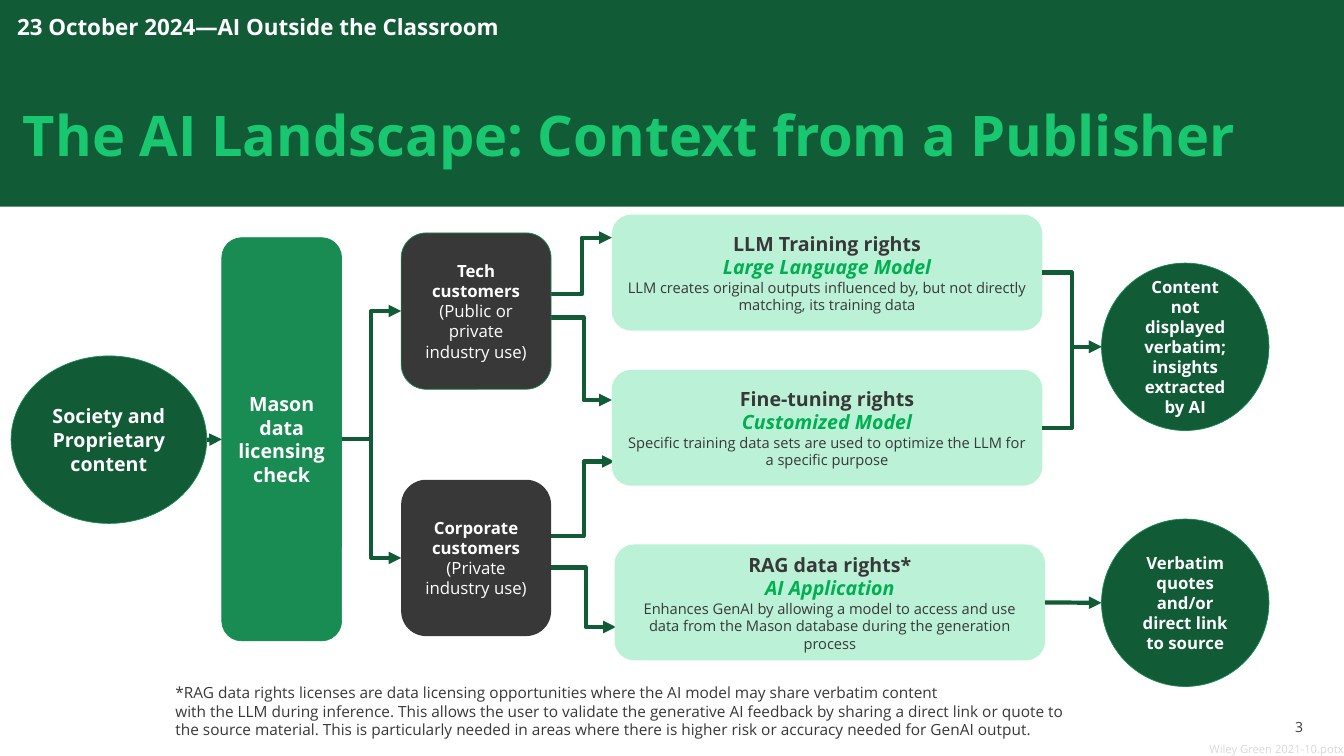
from lxml.etree import SubElement
from pptx import Presentation
from pptx.dml.color import RGBColor
from pptx.enum.shapes import MSO_CONNECTOR as LINK, MSO_SHAPE as SHAPE
from pptx.enum.text import MSO_ANCHOR as ANCHOR, PP_ALIGN as ALIGN
from pptx.oxml.ns import qn
from pptx.util import Cm, Pt

COLORS = {
    "dark": "115C36", "mid": "198C53", "bright": "18C76F", "pale": "BBF2D7",
    "accent": "00B050", "ink": "383838", "faint": "D8D9DA", "white": "FFFFFF",
}
FONT = "Open Sans"
WIDTH, HEIGHT = 33.87, 19.05
BAND_HEIGHT = 5.21
DIAMETER = 4.22
CUSTOMER_SIZE = (3.78, 3.94)
RIGHTS_SIZE = (10.85, 2.92)
TOP, LEFT, BOTTOM, RIGHT = range(4)

TITLE = "The AI Landscape: Context from a Publisher"
DATE = "23 October 2024—AI Outside the Classroom"
NOTE = [
    "*RAG data rights licenses are data licensing opportunities where the AI model may share verbatim content",
    "with the LLM during inference. This allows the user to validate the generative AI feedback by sharing a direct link or quote to",
    "the source material. This is particularly needed in areas where there is higher risk or accuracy needed for GenAI output.",
]
CIRCLES = [
    ("Society and Proprietary content", 0.28, 8.97, 4.93, 14),
    ("Content not displayed verbatim; insights extracted by AI", 27.76, 6.63, DIAMETER, 12),
    ("Verbatim quotes and/or direct link to source", 27.76, 13.08, DIAMETER, 12),
]
LICENSING = ("Mason data licensing check", 5.59, 5.99, 3.02, 10.16)
CUSTOMERS = [
    ("Tech customers", "(Public or private industry use)", 10.11, 5.87, "mid"),
    ("Corporate customers", "(Private industry use)", 10.11, 12.09, None),
]
RIGHTS = [
    ("LLM Training rights", "Large Language Model",
     "LLM creates original outputs influenced by, but not directly matching, its training data", 15.42, 5.41),
    ("Fine-tuning rights", "Customized Model",
     "Specific training data sets are used to optimize the LLM for a specific purpose", 15.42, 9.32),
    ("RAG data rights*", "AI Application",
     "Enhances GenAI by allowing a model to access and use data from the Mason database during the generation process",
     15.49, 13.72),
]
CUSTOMER_ROUTES = [
    ((13.51, 14.3), (15.52, 15.8), 14.76),
    ((13.51, 13.51), (15.49, 11.63), 14.71),
    ((13.16, 8.0), (15.42, 10.08), 14.71),
    ((13.89, 7.42), (15.42, 5.99), 14.66),
]

prs = Presentation()
prs.slide_width, prs.slide_height = Cm(WIDTH), Cm(HEIGHT)
slide = prs.slides.add_slide(prs.slide_layouts[6])


def rgb(name):
    return RGBColor.from_string(COLORS[name])


def write(s, text, size=12, color="white", bold=False, italic=False, align=ALIGN.CENTER, spacing=None):
    tf = s.text_frame
    p = tf.add_paragraph() if tf.text else tf.paragraphs[0]
    p.alignment = align
    if spacing:
        p.line_spacing = spacing
    r = p.add_run()
    r.text = text
    r.font.name, r.font.size = FONT, Pt(size)
    r.font.bold, r.font.italic = bold, italic
    r.font.color.rgb = rgb(color)


def add_box(kind, x, y, w, h, fill, line=None):
    s = slide.shapes.add_shape(kind, Cm(x), Cm(y), Cm(w), Cm(h))
    s.shadow.inherit = False
    s.fill.solid()
    s.fill.fore_color.rgb = rgb(fill)
    if line:
        s.line.color.rgb = rgb(line)
        s.line.width = Pt(0.5)
    else:
        s.line.fill.background()
    s.text_frame.word_wrap = True
    s.text_frame.vertical_anchor = ANCHOR.MIDDLE
    return s


def add_label(x, y, w, h, anchor=ANCHOR.TOP, above=0, below=0):
    s = slide.shapes.add_textbox(Cm(x), Cm(y), Cm(w), Cm(h))
    tf = s.text_frame
    tf.word_wrap, tf.vertical_anchor = True, anchor
    tf.margin_left = tf.margin_right = 0
    tf.margin_top, tf.margin_bottom = Cm(above), Cm(below)
    return s


def add_arrow(kind, start, end, via=None, source=None, target=None, head=True):
    c = slide.shapes.add_connector(kind, *(Cm(v) for v in (*start, *end)))
    if source:
        c.begin_connect(source, RIGHT)
    if target:
        c.end_connect(target, LEFT)
    c.line.color.rgb = rgb("dark")
    c.line.width = Pt(3)
    sp_pr = c.element.spPr
    if via:
        share = round((via - start[0]) / (end[0] - start[0]) * 100000)
        guides = sp_pr.find(qn("a:prstGeom")).get_or_add_avLst()
        SubElement(guides, qn("a:gd"), name="adj1", fmla=f"val {share}")
    if head:
        SubElement(sp_pr.find(qn("a:ln")), qn("a:tailEnd"), type="triangle")
    SubElement(sp_pr, qn("a:effectLst"))


def side(s, edge):
    x = s.left + (s.width if edge == RIGHT else 0)
    return x / Cm(1), (s.top + s.height / 2) / Cm(1)


s = add_label(24, 18.67, 9.87, 0.38, ANCHOR.BOTTOM)
write(s, "Wiley Green 2021-10.potx", size=8, color="faint", align=ALIGN.RIGHT)
s = add_label(31.85, 17.91, 0.99, 0.61, ANCHOR.BOTTOM)
write(s, "3", size=10, color="ink", align=ALIGN.RIGHT)
add_box(SHAPE.RECTANGLE, 0, 0, WIDTH, BAND_HEIGHT, "dark")

for start, end, via in CUSTOMER_ROUTES:
    add_arrow(LINK.ELBOW, start, end, via)

s = add_label(0.58, 2.26, 32.72, 2.08, ANCHOR.BOTTOM, 0.1, 0.1)
write(s, TITLE, size=40, color="bright", bold=True, align=ALIGN.LEFT, spacing=0.9)

circles = []
for text, x, y, w, size in CIRCLES:
    s = add_box(SHAPE.FLOWCHART_CONNECTOR, x, y, w, DIAMETER, "dark", "mid")
    write(s, text, size=size, bold=True)
    circles.append(s)
society, insights, quotes = circles

text, *frame = LICENSING
licensing = add_box(SHAPE.ROUNDED_RECTANGLE, *frame, "mid", "mid")
write(licensing, text, size=14, bold=True)

customers = []
for name, use, x, y, line in CUSTOMERS:
    s = add_box(SHAPE.ROUNDED_RECTANGLE, x, y, *CUSTOMER_SIZE, "ink", line)
    write(s, name, bold=True)
    write(s, use)
    customers.append(s)

rights = []
for name, model, detail, x, y in RIGHTS:
    s = add_box(SHAPE.ROUNDED_RECTANGLE, x, y, *RIGHTS_SIZE, "pale")
    write(s, name, size=14, color="ink", bold=True)
    write(s, model, size=14, color="accent", bold=True, italic=True)
    write(s, detail, size=10.5, color="ink")
    rights.append(s)
training, tuning, rag = rights

s = add_label(4.42, 17.22, 23.67, 1.8)
for text in NOTE:
    write(s, text, size=11, color="ink", align=ALIGN.LEFT)

add_arrow(LINK.STRAIGHT, side(society, RIGHT), side(licensing, LEFT), target=licensing)
for customer in customers:
    add_arrow(LINK.ELBOW, side(licensing, RIGHT), side(customer, LEFT), source=licensing, target=customer)
for right, circle in ((training, insights), (tuning, insights)):
    add_arrow(LINK.ELBOW, side(right, RIGHT), side(circle, LEFT), source=right)
add_arrow(LINK.STRAIGHT, side(rag, RIGHT), side(quotes, LEFT), source=rag)

s = add_label(0.43, 0.3, 31.88, 1.12, above=0.1)
write(s, DATE, size=16, bold=True, align=ALIGN.LEFT, spacing=0.9)

prs.save("out.pptx")
